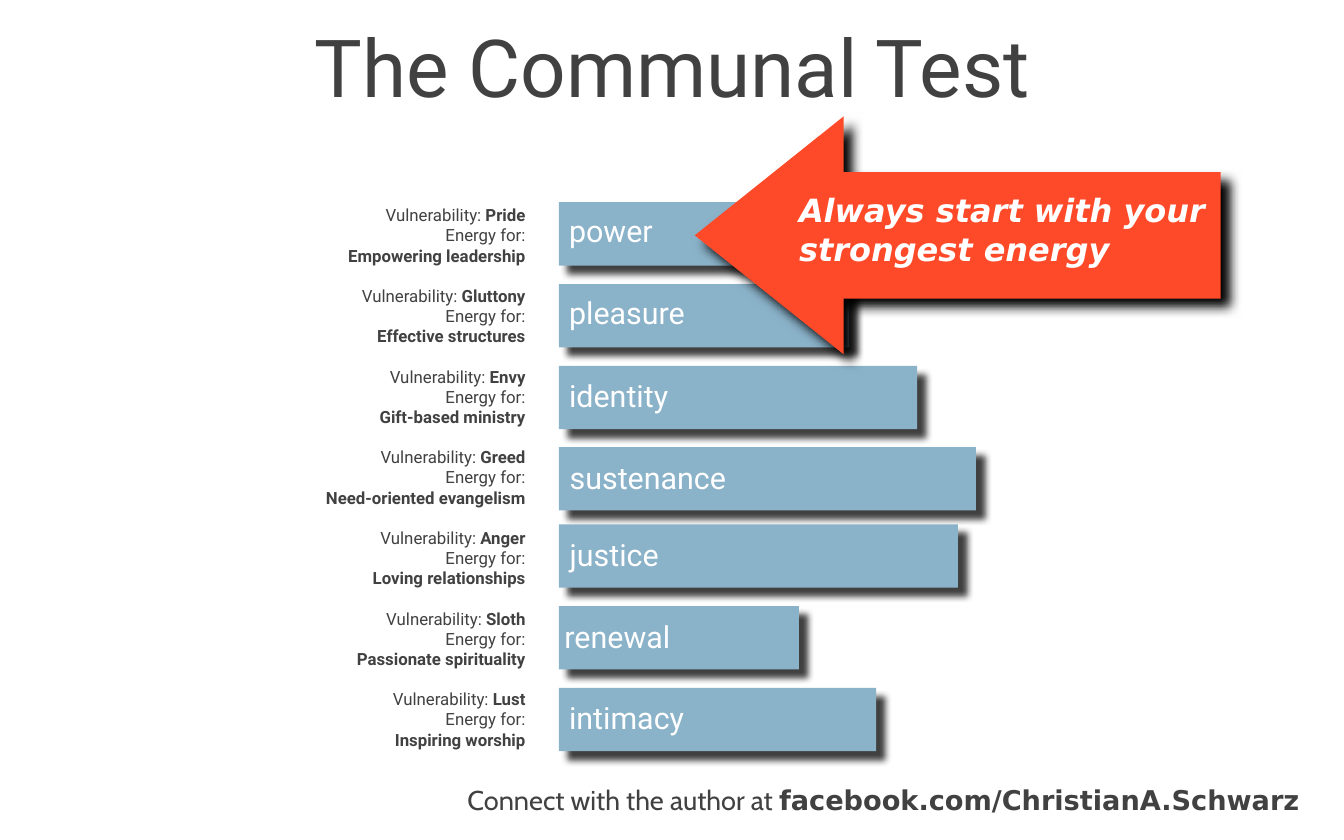
from dataclasses import dataclass
from lxml import etree
from pptx import Presentation
from pptx.dml.color import RGBColor as RGB
from pptx.enum.shapes import MSO_SHAPE as SHAPE
from pptx.enum.text import MSO_ANCHOR as ANCHOR, PP_ALIGN as ALIGN
from pptx.oxml.ns import qn
from pptx.util import Inches, Pt


@dataclass(frozen=True)
class Theme:
    ink: str = "414141"
    white: str = "FFFFFF"
    bar: str = "8AB2C9"
    arrow: str = "FF4A29"
    arrow_shadow: str = "000000"
    body: str = "Roboto"
    callout: str = "DejaVu Sans"
    footer: str = "Cabin"
    title_size: int = 100
    callout_size: int = 40
    bar_size: int = 38
    footer_size: int = 34
    label_size: int = 21
    label_gap: float = 25.2


T = Theme()
ENERGIES = [
    ("power", "Pride", "Empowering leadership", 0, 7.8, 0.08, 0.13),
    ("pleasure", "Gluttony", "Effective structures", 1.42, 5.04, 0.08, 0.12),
    ("identity", "Envy", "Gift-based ministry", 2.84, 6.22, 0.08, 0.15),
    ("sustenance", "Greed", "Need-oriented evangelism", 4.25, 7.24, 0.09, 0.16),
    ("justice", "Anger", "Loving relationships", 5.59, 6.93, 0.09, 0.16),
    ("renewal", "Sloth", "Passionate spirituality", 7.01, 4.17, 0, 0.16),
    ("intimacy", "Lust", "Inspiring worship", 8.43, 5.51, 0.08, 0.15),
]


def add_text(s, box, paragraphs, align=ALIGN.LEFT, anchor=ANCHOR.TOP, inset=None, wrap=True):
    tf = s.shapes.add_textbox(*map(Inches, box)).text_frame
    tf.word_wrap, tf.vertical_anchor = wrap, anchor
    if inset is not None:
        for side in ("left", "right", "top", "bottom"):
            setattr(tf, f"margin_{side}", Inches(inset))
    for i, runs in enumerate(paragraphs):
        p = tf.add_paragraph() if i else tf.paragraphs[0]
        p.alignment = align
        for text, size, name, color, fmt in runs:
            r = p.add_run()
            r.text = text
            for key, value in {"size": Pt(size), "name": name, **fmt}.items():
                setattr(r.font, key, value)
            r.font.color.rgb = RGB.from_string(color)
    return tf


def add_block(s, kind, box, fill, shadow, blur):
    sp = s.shapes.add_shape(kind, *map(Inches, box))
    sp.shadow.inherit = False
    sp.fill.solid()
    sp.fill.fore_color.rgb = RGB.from_string(fill)
    sp.line.fill.background()
    effects = sp.element.spPr.find(qn("a:effectLst"))
    outer = etree.SubElement(effects, qn("a:outerShdw"), blurRad=str(Pt(blur)),
                             dist=str(Pt(15)), dir="2700000", rotWithShape="0")
    etree.SubElement(outer, qn("a:srgbClr"), val=shadow)
    return sp


def add_title(s, box):
    add_text(s, box, [[("The Communal Test", T.title_size, T.body, T.ink, {})]],
             ALIGN.CENTER, ANCHOR.MIDDLE, 0.07)


def add_bars(s, x, y, height):
    for name, _, _, top, width, dx, dy in ENERGIES:
        add_block(s, SHAPE.RECTANGLE, (x, y + top, width, height), T.bar, T.ink, 8.5)
        add_text(s, (x + dx, y + top + dy, 4, 0.74),
                 [[(name, T.bar_size, T.body, T.white, {})]])


def add_labels(s, box):
    def run(text, bold=False):
        return text, T.label_size, T.body, T.ink, {"bold": bold}

    lines = []
    for _, vulnerability, energy, *_ in ENERGIES:
        lines += [[run("Vulnerability: "), run(vulnerability, True)],
                  [run("Energy for:")], [run(energy, True)]]
    tf = add_text(s, box, lines, ALIGN.RIGHT)
    for p in tf.paragraphs[3::3]:
        p.space_before = Pt(T.label_gap)


def add_callout(s, box):
    x, y, width, height = box
    sp = add_block(s, SHAPE.LEFT_ARROW, box, T.arrow, T.arrow_shadow, 15)
    sp.adjustments[0], sp.adjustments[1] = 0.531, 0.626
    fmt = {"bold": True, "italic": True}
    add_text(s, (x + 1.81, y + 1.28, width - 1.83, 1.35),
             [[(line, T.callout_size, T.callout, T.white, fmt)]
              for line in ("Always start with your", "strongest energy")],
             anchor=ANCHOR.MIDDLE, inset=0)


def add_footer(s, box):
    add_text(s, box, [[
        ("Connect with the author at ", T.footer_size, T.footer, T.ink, {}),
        ("facebook.com/ChristianA.Schwarz", T.footer_size, T.callout, T.ink, {"bold": True}),
    ]], ALIGN.RIGHT, ANCHOR.MIDDLE, 0, wrap=False)


def main():
    prs = Presentation()
    prs.slide_width, prs.slide_height = Inches(23.33), Inches(14.58)
    s = prs.slides.add_slide(prs.slide_layouts[6])
    add_footer(s, (8.03, 13.59, 14.53, 0.57))
    add_bars(s, 9.7, 3.51, 1.1)
    add_labels(s, (5.05, 3.51, 4.17, 9.64))
    add_callout(s, (12.06, 2.02, 9.13, 4.13))
    add_title(s, (0.64, 0, 22.06, 2.29))
    prs.save("out.pptx")


if __name__ == "__main__":
    main()
